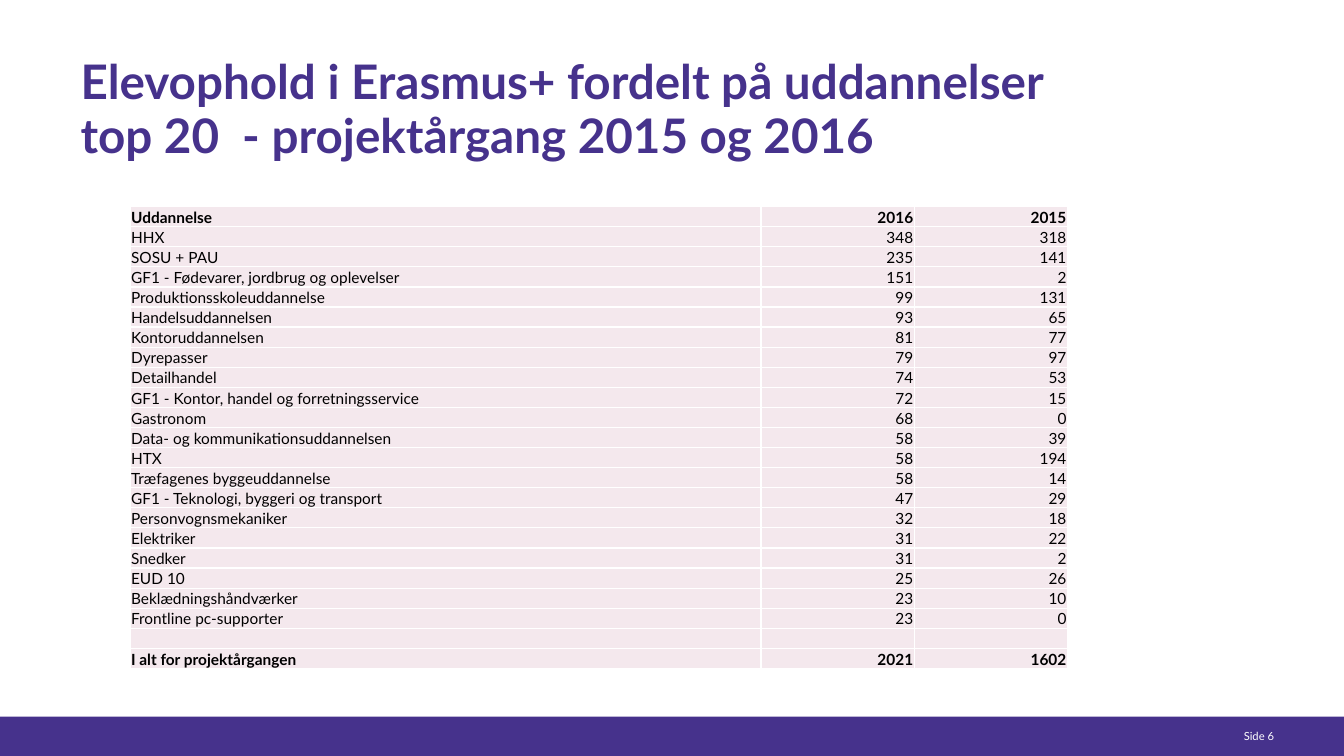
from dataclasses import dataclass
from typing import NamedTuple

from lxml import etree
from pptx import Presentation
from pptx import util as u
from pptx.dml.color import RGBColor
from pptx.enum import shapes, text
from pptx.oxml import ns


@dataclass(frozen=True)
class Theme:
    font: str = "Lato"
    purple: str = "46328C"
    rose: str = "F4E8ED"
    white: str = "FFFFFF"
    black: str = "000000"
    title_size: int = 34
    table_size: int = 11
    footer_size: int = 8
    border_width: int = 1


class Area(NamedTuple):
    """A region in percent of the slide's width and height."""
    left: float
    top: float
    width: float
    height: float


class Style(NamedTuple):
    size: int
    color: str
    bold: bool = False
    align: text.PP_ALIGN = text.PP_ALIGN.LEFT


class Programme(NamedTuple):
    name: str
    stays_2016: str
    stays_2015: str
    bold: bool = False


THEME = Theme()
SLIDE_WIDTH, SLIDE_HEIGHT = u.Inches(13.33), u.Inches(7.5)

TITLE_AREA = Area(6, 7.47, 88, 13.6)
FOOTER_AREA = Area(0, 94.8, 100, 5.2)
PAGE_NUMBER_AREA = Area(91.13, 95.6, 3.67, 2.67)
TABLE_AREA = Area(9.68, 27.33, 69.75, 61.2)
COLUMN_SHARES = (46.95, 11.4, 11.4)

PROGRAMMES = [
    Programme("Uddannelse", "2016", "2015", bold=True),
    Programme("HHX", "348", "318"),
    Programme("SOSU + PAU", "235", "141"),
    Programme("GF1 - Fødevarer, jordbrug og oplevelser", "151", "2"),
    Programme("Produktionsskoleuddannelse", "99", "131"),
    Programme("Handelsuddannelsen", "93", "65"),
    Programme("Kontoruddannelsen", "81", "77"),
    Programme("Dyrepasser", "79", "97"),
    Programme("Detailhandel", "74", "53"),
    Programme("GF1 - Kontor, handel og forretningsservice", "72", "15"),
    Programme("Gastronom", "68", "0"),
    Programme("Data- og kommunikationsuddannelsen", "58", "39"),
    Programme("HTX", "58", "194"),
    Programme("Træfagenes byggeuddannelse", "58", "14"),
    Programme("GF1 - Teknologi, byggeri og transport", "47", "29"),
    Programme("Personvognsmekaniker", "32", "18"),
    Programme("Elektriker", "31", "22"),
    Programme("Snedker", "31", "2"),
    Programme("EUD 10", "25", "26"),
    Programme("Beklædningshåndværker", "23", "10"),
    Programme("Frontline pc-supporter", "23", "0"),
    Programme("", "", ""),
    Programme("I alt for projektårgangen", "2021", "1602", bold=True),
]


def across(share: float) -> u.Emu:
    return u.Emu(round(SLIDE_WIDTH * share / 100))


def down(share: float) -> u.Emu:
    return u.Emu(round(SLIDE_HEIGHT * share / 100))


def place(area: Area) -> tuple:
    return across(area.left), down(area.top), across(area.width), down(area.height)


def style_paragraph(para, style: Style) -> None:
    para.alignment = style.align
    for span in para.runs:
        span.font.name = THEME.font
        span.font.size = u.Pt(style.size)
        span.font.bold = style.bold
        span.font.color.rgb = RGBColor.from_string(style.color)


def add_text(page, area: Area, words: str, style: Style, anchor: text.MSO_ANCHOR):
    frame = page.shapes.add_textbox(*place(area)).text_frame
    frame.word_wrap = True
    frame.vertical_anchor = anchor
    frame.margin_left = frame.margin_right = frame.margin_top = frame.margin_bottom = 0
    para = frame.paragraphs[0]
    para.text = words
    style_paragraph(para, style)
    return para


def add_footer_bar(page) -> None:
    bar = page.shapes.add_shape(shapes.MSO_SHAPE.RECTANGLE, *place(FOOTER_AREA))
    bar.shadow.inherit = False
    bar.fill.solid()
    bar.fill.fore_color.rgb = RGBColor.from_string(THEME.purple)
    bar.line.fill.background()


def add_borders(cell) -> None:
    properties = cell._tc.get_or_add_tcPr()
    for index, side in enumerate(("a:lnL", "a:lnR", "a:lnT", "a:lnB")):
        line = etree.Element(ns.qn(side), w=str(u.Pt(THEME.border_width)))
        fill = etree.SubElement(line, ns.qn("a:solidFill"))
        etree.SubElement(fill, ns.qn("a:srgbClr"), val=THEME.white)
        properties.insert(index, line)


def fill_cell(cell, words: str, style: Style) -> None:
    cell.fill.solid()
    cell.fill.fore_color.rgb = RGBColor.from_string(THEME.rose)
    cell.vertical_anchor = text.MSO_ANCHOR.BOTTOM
    cell.margin_left = cell.margin_right = cell.margin_top = u.Inches(0.01)
    cell.margin_bottom = 0
    para = cell.text_frame.paragraphs[0]
    if words:
        para.text = words
        style_paragraph(para, style)
    else:
        # An empty cell needs a small type size to keep its row low
        etree.SubElement(para._p, ns.qn("a:endParaRPr"), sz=str(style.size * 100))
    add_borders(cell)


def add_programme_table(page) -> None:
    frame = page.shapes.add_table(len(PROGRAMMES), len(COLUMN_SHARES), *place(TABLE_AREA))
    table = frame.table
    table.first_row = table.horz_banding = False
    for column, share in zip(table.columns, COLUMN_SHARES):
        column.width = across(share)
    for row, programme in zip(table.rows, PROGRAMMES):
        row.height = down(TABLE_AREA.height / len(PROGRAMMES))
        for index, cell in enumerate(row.cells):
            align = text.PP_ALIGN.RIGHT if index else text.PP_ALIGN.LEFT
            style = Style(THEME.table_size, THEME.black, programme.bold, align)
            fill_cell(cell, programme[index], style)


def main() -> None:
    deck = Presentation()
    deck.slide_width, deck.slide_height = SLIDE_WIDTH, SLIDE_HEIGHT
    page = deck.slides.add_slide(deck.slide_layouts[6])

    # Footer with page number
    add_footer_bar(page)
    add_text(page, PAGE_NUMBER_AREA, "Side 6",
             Style(THEME.footer_size, THEME.white, align=text.PP_ALIGN.RIGHT),
             text.MSO_ANCHOR.BOTTOM)

    # Title
    title = add_text(page, TITLE_AREA,
                     "Elevophold i Erasmus+ fordelt på uddannelser\v"
                     "top 20  - projektårgang 2015 og 2016",
                     Style(THEME.title_size, THEME.purple, bold=True),
                     text.MSO_ANCHOR.TOP)
    title.line_spacing = 0.94

    # Stays by programme
    add_programme_table(page)
    deck.save("out.pptx")


if __name__ == "__main__":
    main()
